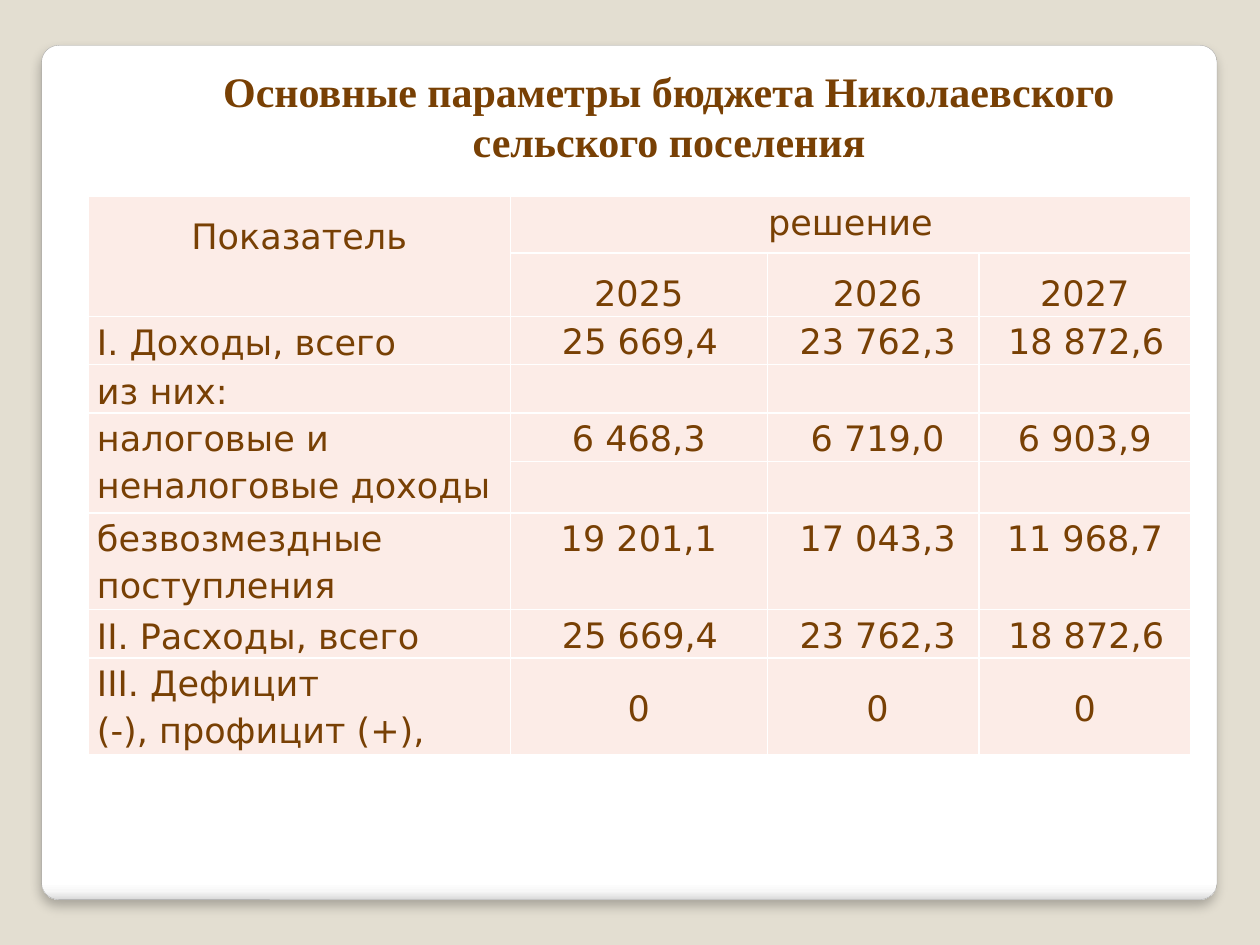
import pptx
import pptx.util
import pptx.oxml
import pptx.dml.color
import pptx.enum.shapes
import pptx.enum.text

Inches, Pt = pptx.util.Inches, pptx.util.Pt
RGB = pptx.dml.color.RGBColor
ALIGN = pptx.enum.text.PP_ALIGN
ANCHOR = pptx.enum.text.MSO_ANCHOR

SAND = RGB(0xE3, 0xDE, 0xD1)
GREY = RGB(0xA4, 0xA4, 0xA4)
BROWN = RGB(0x78, 0x40, 0x04)
PINK = RGB(0xFC, 0xEC, 0xE7)
WHITE = RGB(0xFF, 0xFF, 0xFF)

NS = 'xmlns:a="http://schemas.openxmlformats.org/drawingml/2006/main"'
STOPS = [(0, "FFFFFF"), (98, "FFFFFF"), (99, "F7F7F7"), (100, "DADADA")]
SHADE = f"""<a:effectLst {NS}><a:outerShdw blurRad="{Pt(6)}" dist="{Pt(4)}"
 dir="5400000" algn="tl" rotWithShape="0"><a:srgbClr val="000000">
<a:alpha val="25000"/></a:srgbClr></a:outerShdw></a:effectLst>"""


class Page:
    def __init__(self, slide):
        self.slide = slide
        self.font = "DejaVu Sans"
        self.size = 20

    def back(self, color):
        fill = self.slide.background.fill
        fill.solid()
        fill.fore_color.rgb = color

    def card(self, left, top, width, height):
        box = self.slide.shapes.add_shape(
            pptx.enum.shapes.MSO_SHAPE.ROUNDED_RECTANGLE,
            Inches(left), Inches(top), Inches(width), Inches(height))
        box.adjustments[0] = 0.02
        box.line.color.rgb = GREY
        box.line.width = Pt(0.16)
        # Four-stop gradient, darker at the lower edge
        box.fill.gradient()
        box.fill.gradient_angle = 270
        stops = box._element.spPr.find(".//{*}gsLst")
        for old in list(stops):
            stops.remove(old)
        for pos, color in STOPS:
            stops.append(pptx.oxml.parse_xml(
                f'<a:gs {NS} pos="{pos * 1000}"><a:srgbClr val="{color}"/></a:gs>'))
        box._element.spPr.append(pptx.oxml.parse_xml(SHADE))

    def style(self, para, font, size, align, bold=False):
        para.alignment = align
        para.font.name = font
        para.font.size = Pt(size)
        para.font.bold = bold
        para.font.color.rgb = BROWN

    def title(self, text, left, top, width, height):
        box = self.slide.shapes.add_textbox(
            Inches(left), Inches(top), Inches(width), Inches(height))
        frame = box.text_frame
        frame.word_wrap = True
        frame.text = text
        self.style(frame.paragraphs[0], "Times New Roman", 24, ALIGN.CENTER, True)

    def table(self, left, top, cols, rows):
        frame = self.slide.shapes.add_table(
            len(rows), len(cols), Inches(left), Inches(top),
            Inches(sum(cols)), Inches(sum(rows)))
        grid = frame.table
        for col, width in zip(grid.columns, cols):
            col.width = Inches(width)
        for row, height in zip(grid.rows, rows):
            row.height = Inches(height)
        for cell in grid.iter_cells():
            self.frame(cell)
        return grid

    def frame(self, cell):
        cell.margin_left = cell.margin_right = Inches(0.07)
        cell.margin_top = cell.margin_bottom = 0
        props = cell._tc.get_or_add_tcPr()
        for side in ("lnL", "lnR", "lnT", "lnB"):
            props.append(pptx.oxml.parse_xml(
                f'<a:{side} {NS} w="{Pt(1)}"><a:solidFill>'
                f'<a:srgbClr val="{WHITE}"/></a:solidFill></a:{side}>'))
        cell.fill.solid()
        cell.fill.fore_color.rgb = PINK

    def cell(self, cell, text, align=ALIGN.CENTER, indent=0, space=1.15, middle=False):
        cell.text = text
        if middle:
            cell.vertical_anchor = ANCHOR.MIDDLE
        for para in cell.text_frame.paragraphs:
            self.style(para, self.font, self.size, align)
            para.line_spacing = space
            props = para._p.get_or_add_pPr()
            props.set("marL", "0")
            props.set("indent", str(Inches(indent)))


def main():
    deck = pptx.Presentation()
    deck.slide_width, deck.slide_height = Inches(10), Inches(7.5)
    page = Page(deck.slides.add_slide(deck.slide_layouts[6]))

    # Backdrop and heading
    page.back(SAND)
    page.card(0.33, 0.36, 9.33, 6.78)
    page.title("Основные параметры бюджета Николаевского сельского поселения",
               1.09, 0.47, 8.44, 0.91)

    # Table head
    grid = page.table(0.7, 1.56, [3.35, 2.04, 1.68, 1.68],
                      [0.45, 0.43, 0.38, 0.38, 0.34, 0.41, 0.75, 0.38, 0.75])
    for first, last in [((0, 0), (1, 0)), ((0, 1), (0, 3)), ((4, 0), (5, 0))]:
        grid.cell(*first).merge(grid.cell(*last))
    page.cell(grid.cell(0, 0), "Показатель", indent=-0.07, space=1.5)
    page.cell(grid.cell(0, 1), "решение")
    for col, year in enumerate(["2025", "2026", "2027"], 1):
        page.cell(grid.cell(1, col), year, indent=0.07 if col == 2 else 0, space=1.5)

    # Budget lines: row, label, label centred, values, indent of outer columns
    total = ["25 669,4", "23 762,3", "18 872,6"]
    lines = [
        (2, "I. Доходы, всего", True, total, 0.02),
        (3, "из них:", True, [], 0),
        (4, "налоговые и неналоговые доходы", False,
         ["6 468,3", "6 719,0", "6 903,9"], -0.07),
        (6, "безвозмездные поступления", False,
         ["19 201,1", "17 043,3", "11 968,7"], -0.07),
        (7, "II. Расходы, всего", True, total, 0.02),
        (8, "III. Дефицит\n(-), профицит (+),", False, ["0"] * 3, 0),
    ]
    for row, label, middle, values, indent in lines:
        page.cell(grid.cell(row, 0), label, ALIGN.LEFT, middle=middle)
        for col, value in enumerate(values, 1):
            page.cell(grid.cell(row, col), value, middle=value == "0",
                      indent=0.07 if col == 2 else indent)

    deck.save("out.pptx")


if __name__ == "__main__":
    main()
